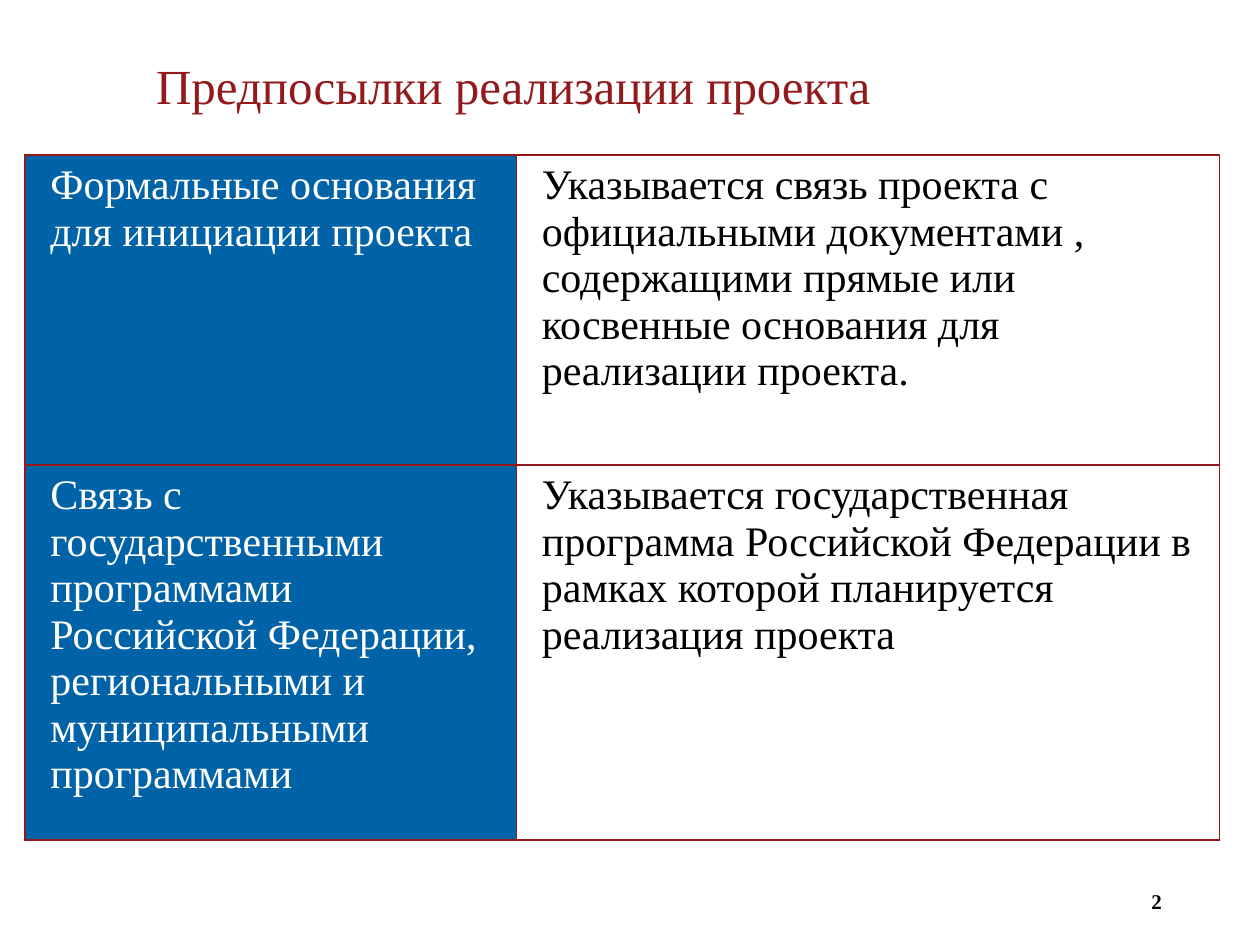
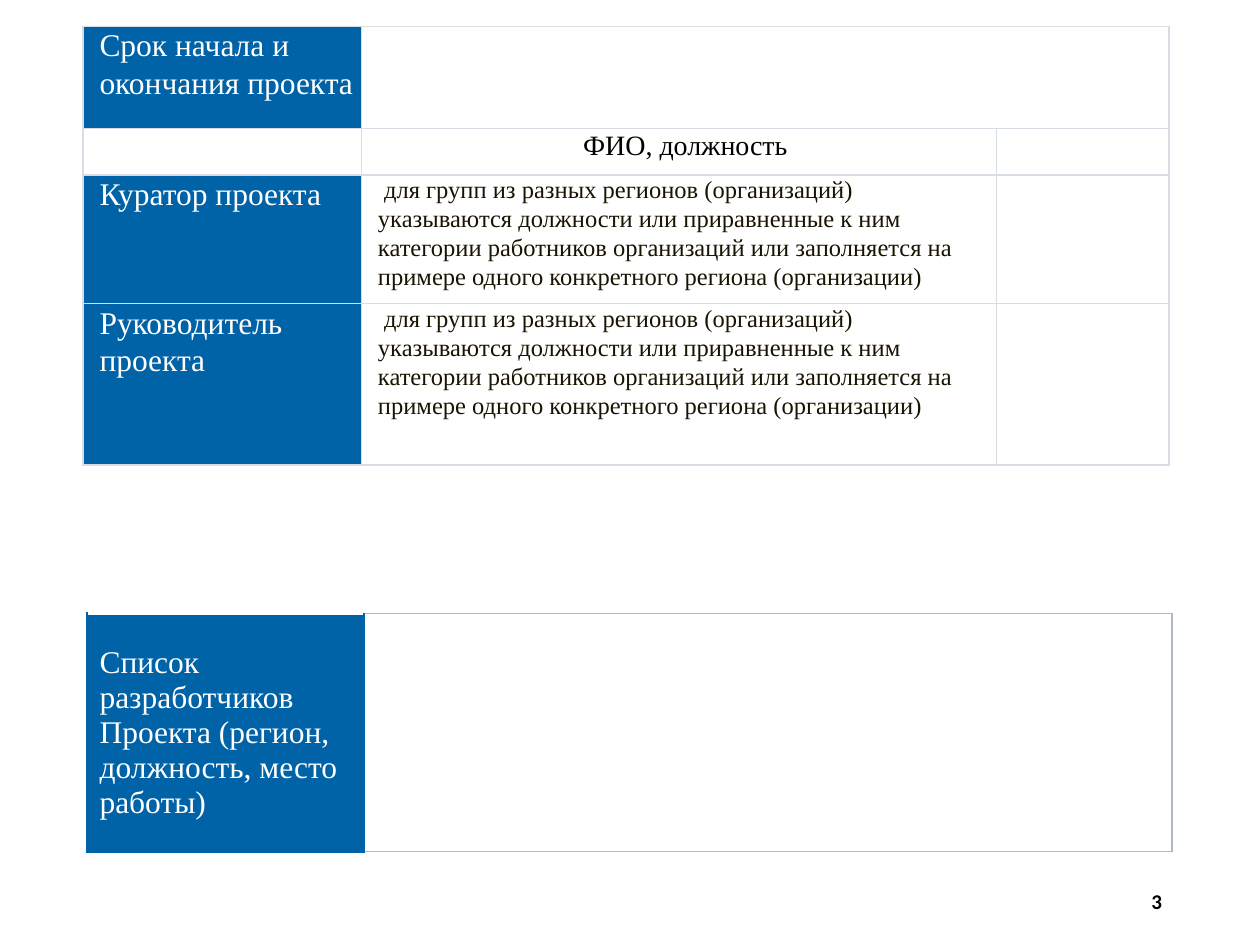
"""Build two project passport slides: prerequisites, then dates and people."""
import pptx
import pptx.dml.color
import pptx.enum.text
import pptx.oxml
import pptx.oxml.ns
import pptx.util

Inches, Pt = pptx.util.Inches, pptx.util.Pt
RGB = pptx.dml.color.RGBColor
ALIGN = pptx.enum.text.PP_ALIGN
ANCHOR = pptx.enum.text.MSO_ANCHOR
BLUE = RGB(0x00, 0x62, 0xA7)
RED = RGB(0x92, 0x1A, 0x1D)
WHITE = RGB(0xFF, 0xFF, 0xFF)
BLACK = RGB(0x00, 0x00, 0x00)
DARK = RGB(0x1A, 0x13, 0x00)
PALE = RGB(0xD8, 0xDC, 0xE5)
GRAY = RGB(0xB0, 0xB9, 0xCB)
SERIF = "Times New Roman"

deck = pptx.Presentation()
deck.slide_width, deck.slide_height = Inches(10), Inches(7.5)
COL, ROW = deck.slide_width / 100, deck.slide_height / 100


def write(frame, text, size, color, face=SERIF, bold=False, indent=0, **form):
    """Fill a text frame, one paragraph per line of text."""
    frame.word_wrap = True
    for num, line in enumerate(text.split("\n")):
        para = frame.add_paragraph() if num else frame.paragraphs[0]
        for key, value in form.items():
            setattr(para, key, value)
        para._p.get_or_add_pPr().set("marL", str(Inches(indent)))
        para._p.get_or_add_pPr().set("indent", "0")
        run = para.add_run()
        run.text = line
        for key, value in {"name": face, "size": Pt(size), "bold": bold}.items():
            setattr(run.font, key, value)
        run.font.color.rgb = color


def grid(slide, left, top, cols, rows, edges, pad):
    """Add a table with a blue first column; edges(col) gives L, R, T, B lines."""
    table = slide.shapes.add_table(
        len(rows), len(cols), int(left * COL), int(top * ROW),
        int(sum(cols) * COL), int(sum(rows) * ROW)).table
    table.first_row = table.horz_banding = False
    for part, width in zip(table.columns, cols):
        part.width = int(width * COL)
    for part, height in zip(table.rows, rows):
        part.height = int(height * ROW)
    for row in table.rows:
        for col, cell in enumerate(row.cells):
            for side, gap in zip(("left", "right", "top", "bottom"), pad):
                setattr(cell, f"margin_{side}", Inches(gap))
            cell.fill.solid()
            cell.fill.fore_color.rgb = WHITE if col else BLUE
            for num, (side, (color, width)) in enumerate(zip("LRTB", edges(col))):
                cell._tc.get_or_add_tcPr().insert(num, pptx.oxml.parse_xml(
                    f'<a:ln{side} {pptx.oxml.ns.nsdecls("a")} w="{Pt(width)}">'
                    f'<a:solidFill><a:srgbClr val="{color}"/></a:solidFill>'
                    f'</a:ln{side}>'))
    return table


first, second = [deck.slides.add_slide(deck.slide_layouts[6]) for _ in range(2)]

for slide, mark, face in ((first, "2", SERIF), (second, "3", "Calibri")):
    box = slide.shapes.add_textbox(
        int(70.7 * COL), int(92.67 * ROW), int(22.5 * COL), int(5.33 * ROW))
    box.text_frame.vertical_anchor = ANCHOR.MIDDLE
    write(box.text_frame, mark, 12, BLACK, face, True, alignment=ALIGN.RIGHT)

grounds = grid(first, 2, 16.4, (39, 55.8), (32.8, 39.7),
               lambda col: [(RED, 1)] * 4, (0.11, 0.11, 0.06, 0.06))
TOPICS = (
    ("Формальные основания для инициации проекта",
     "Указывается связь проекта с официальными документами , содержащими "
     "прямые или косвенные основания для реализации проекта."),
    ("Связь с государственными программами Российской Федерации, "
     "региональными и муниципальными программами",
     "Указывается государственная программа Российской Федерации в рамках "
     "которой планируется реализация проекта"),
)
for row, pair in enumerate(TOPICS):
    for col, text in enumerate(pair):
        write(grounds.cell(row, col).text_frame, text, 24,
              BLACK if col else WHITE, indent=0.09, space_before=Pt(6))

title = first.shapes.add_textbox(
    int(8.5 * COL), int(5.6 * ROW), int(76.2 * COL), int(7.2 * ROW))
title.text_frame.vertical_anchor = ANCHOR.BOTTOM
write(title.text_frame, "Предпосылки реализации проекта", 28, RED,
      indent=0.29, line_spacing=0.9)

people = grid(second, 6.6, 2.8, (22.1, 50.4, 13.7), (10.8, 4.93, 13.6, 17.07),
              lambda col: [(PALE, 1)] * 4, (0.03, 0.03, 0, 0))
people.cell(0, 1).merge(people.cell(0, 2))
people.cell(1, 0).fill.fore_color.rgb = WHITE
BODY = {"indent": 0.1, "line_spacing": 1.07}
HINT = (" для групп из разных регионов (организаций) указываются должности или "
        "приравненные к ним категории работников организаций или заполняется "
        "на примере одного конкретного региона (организации)")
ROLES = {0: "Срок начала и окончания проекта", 2: "Куратор проекта",
         3: "Руководитель проекта"}
for row, text in ROLES.items():
    write(people.cell(row, 0).text_frame, text, 18, WHITE, **BODY)
    if row:
        write(people.cell(row, 1).text_frame, HINT, 14, DARK, **BODY)
write(people.cell(1, 1).text_frame, "ФИО, должность", 16, BLACK,
      alignment=ALIGN.CENTER, **BODY)

EDGES = ([(BLUE, 1.5), (BLUE, 1), (WHITE, 1.5), (BLUE, 1.5)],
         [(BLUE, 1)] + [(GRAY, 1)] * 3)
team = grid(second, 6.9, 64.93, (22, 64.1), (25.2,),
            lambda col: EDGES[col], (0.1, 0.1, 0.05, 0.05))
team.cell(0, 0).vertical_anchor = ANCHOR.MIDDLE
write(team.cell(0, 0).text_frame,
      "Список разработчиков\nПроекта (регион, должность, место работы)", 18, WHITE)

deck.save("out.pptx")
